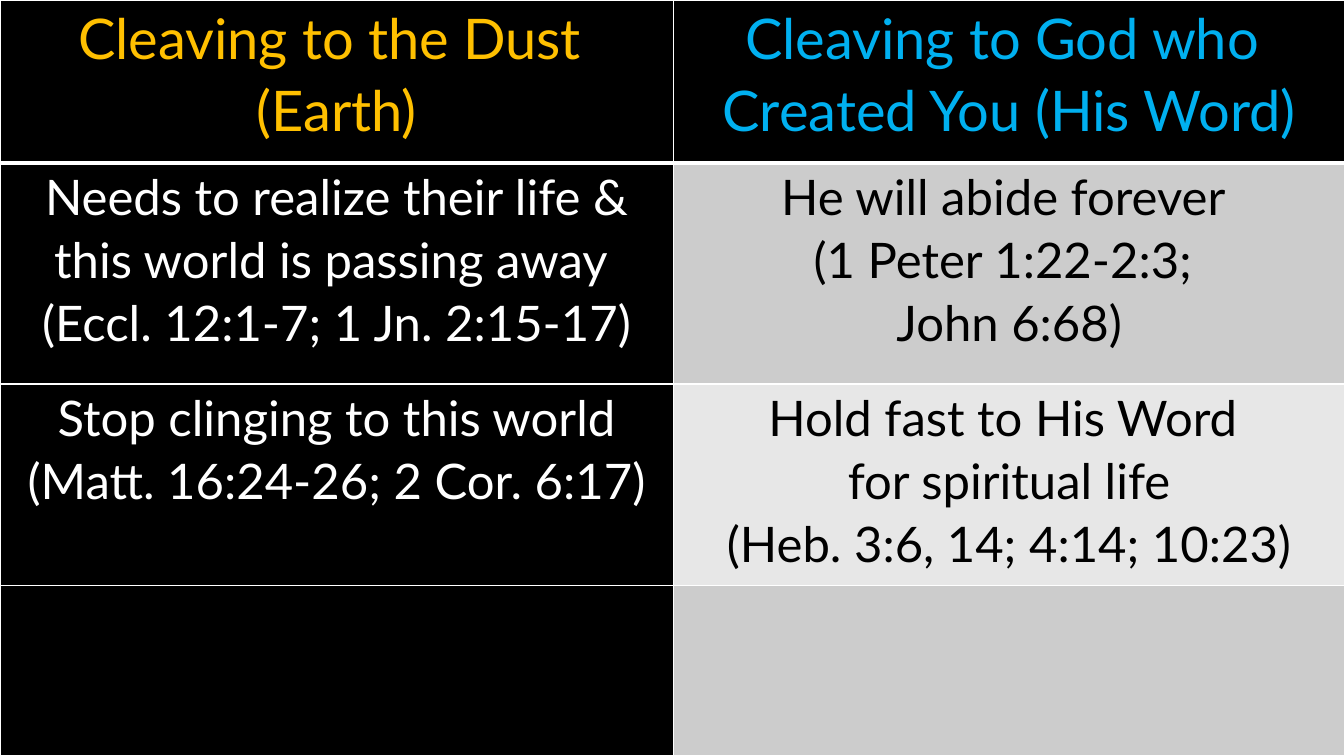
"""Build a two-column slide comparing cleaving to the dust with cleaving to God."""
from lxml import etree
from pptx import Presentation
from pptx.dml.color import RGBColor
from pptx.enum.text import PP_ALIGN
from pptx.oxml.ns import qn
from pptx.util import Inches, Pt

CENTER = PP_ALIGN.CENTER
COLORS = {
    "black": "000000",
    "white": "FFFFFF",
    "gold": "FFC000",
    "blue": "00B0F0",
    "gray": "CCCCCC",
    "light_gray": "E7E7E7",
}
COLUMN_WIDTHS = [6.68, 6.66]
ROW_HEIGHTS = [1.62, 2.19, 2, 1.69]
HEADER_SIZE, BODY_SIZE = 40, 35
THIN, THICK = 1, 3

ROWS = [
    [
        (["Cleaving to the Dust ", "(Earth)"], "gold", "black"),
        (["Cleaving to God who ", "Created You (His Word)"], "blue", "black"),
    ],
    [
        (["Needs to realize their life & this world is passing away ",
          "(Eccl. 12:1-7; 1 Jn. 2:15-17)"], "white", "black"),
        (["He will abide forever ", "(1 Peter 1:22-2:3; ", "John 6:68)"], "black", "gray"),
    ],
    [
        (["Stop clinging to this world", "(Matt. 16:24-26; 2 Cor. 6:17)"], "white", "black"),
        (["Hold fast to His Word ", "for spiritual life", "(Heb. 3:6, 14; 4:14; 10:23)"],
         "black", "light_gray"),
    ],
    [([], "white", "black"), ([], "black", "gray")],
]


def write_text(text_frame, lines, size, color, font="Lato", line_spacing=1.07):
    for index, line in enumerate(lines):
        paragraph = text_frame.add_paragraph() if index else text_frame.paragraphs[0]
        paragraph.alignment = CENTER
        paragraph.line_spacing = line_spacing
        run = paragraph.add_run()
        run.text = line
        run.font.name = font
        run.font.size = Pt(size)
        run.font.color.rgb = RGBColor.from_string(COLORS[color])


def add_border(cell, side, width):
    properties = cell._tc.get_or_add_tcPr()
    line = etree.SubElement(properties, qn(f"a:ln{side}"), w=str(Pt(width)))
    fill = etree.SubElement(line, qn("a:solidFill"))
    etree.SubElement(fill, qn("a:srgbClr"), val=COLORS["white"])


presentation = Presentation()
presentation.slide_width = Inches(13.33)
presentation.slide_height = Inches(7.5)
slide = presentation.slides.add_slide(presentation.slide_layouts[6])
slide.background.fill.solid()
slide.background.fill.fore_color.rgb = RGBColor.from_string(COLORS["black"])

table = slide.shapes.add_table(
    len(ROW_HEIGHTS), len(COLUMN_WIDTHS), Inches(0), Inches(0), Inches(13.33), Inches(7.5)
).table
for column, width in zip(table.columns, COLUMN_WIDTHS):
    column.width = Inches(width)
for row, height in zip(table.rows, ROW_HEIGHTS):
    row.height = Inches(height)

for row_index, row_content in enumerate(ROWS):
    size = BODY_SIZE if row_index else HEADER_SIZE
    for column_index, (lines, text_color, fill_color) in enumerate(row_content):
        cell = table.cell(row_index, column_index)
        cell.margin_left = cell.margin_right = Inches(0.07)
        cell.margin_top = cell.margin_bottom = Inches(0)
        for side in "LRTB":
            under_header = (row_index, side) in [(0, "B"), (1, "T")]
            add_border(cell, side, THICK if under_header else THIN)
        cell.fill.solid()
        cell.fill.fore_color.rgb = RGBColor.from_string(COLORS[fill_color])
        write_text(cell.text_frame, lines, size=size, color=text_color)

presentation.save("out.pptx")
